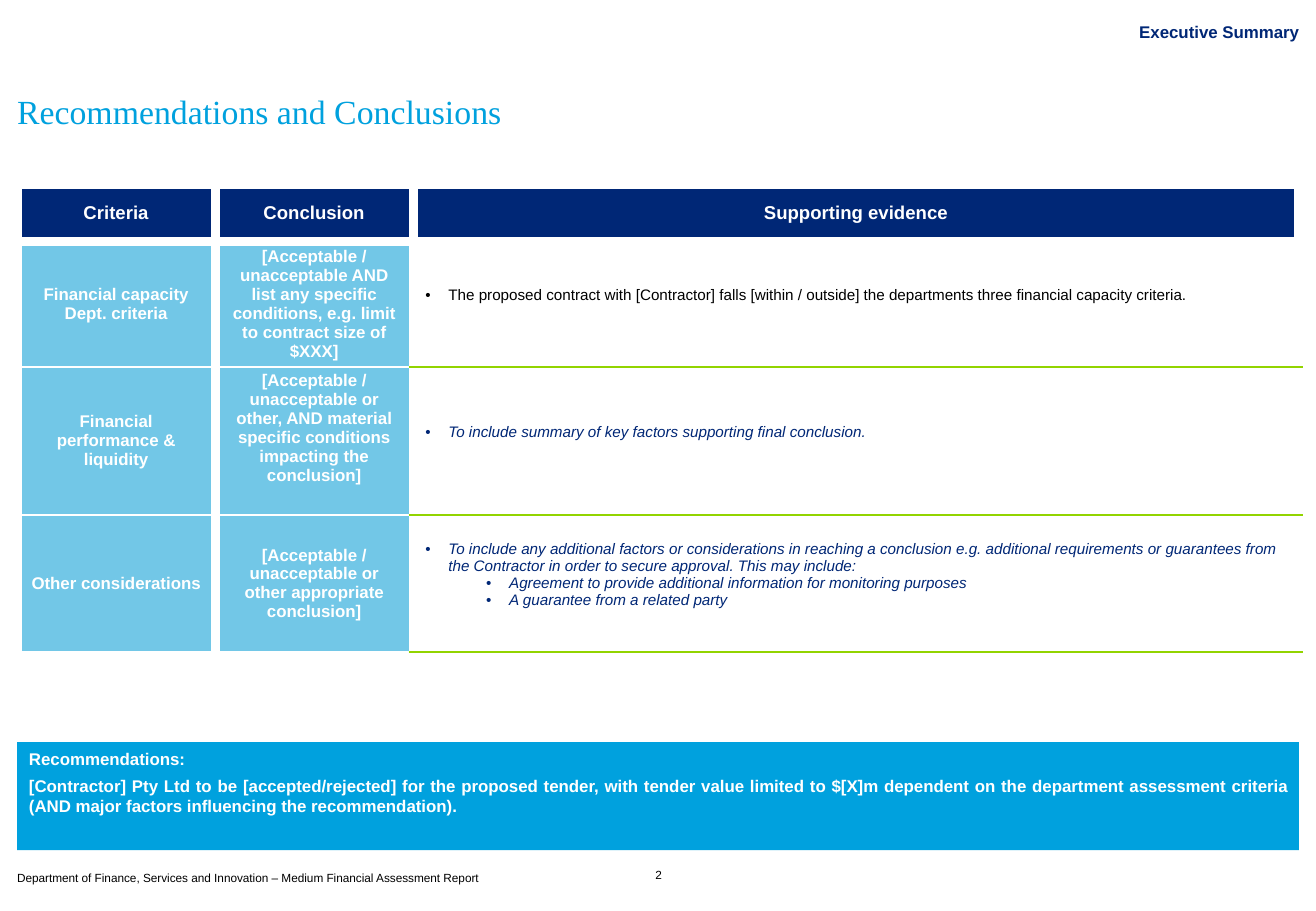
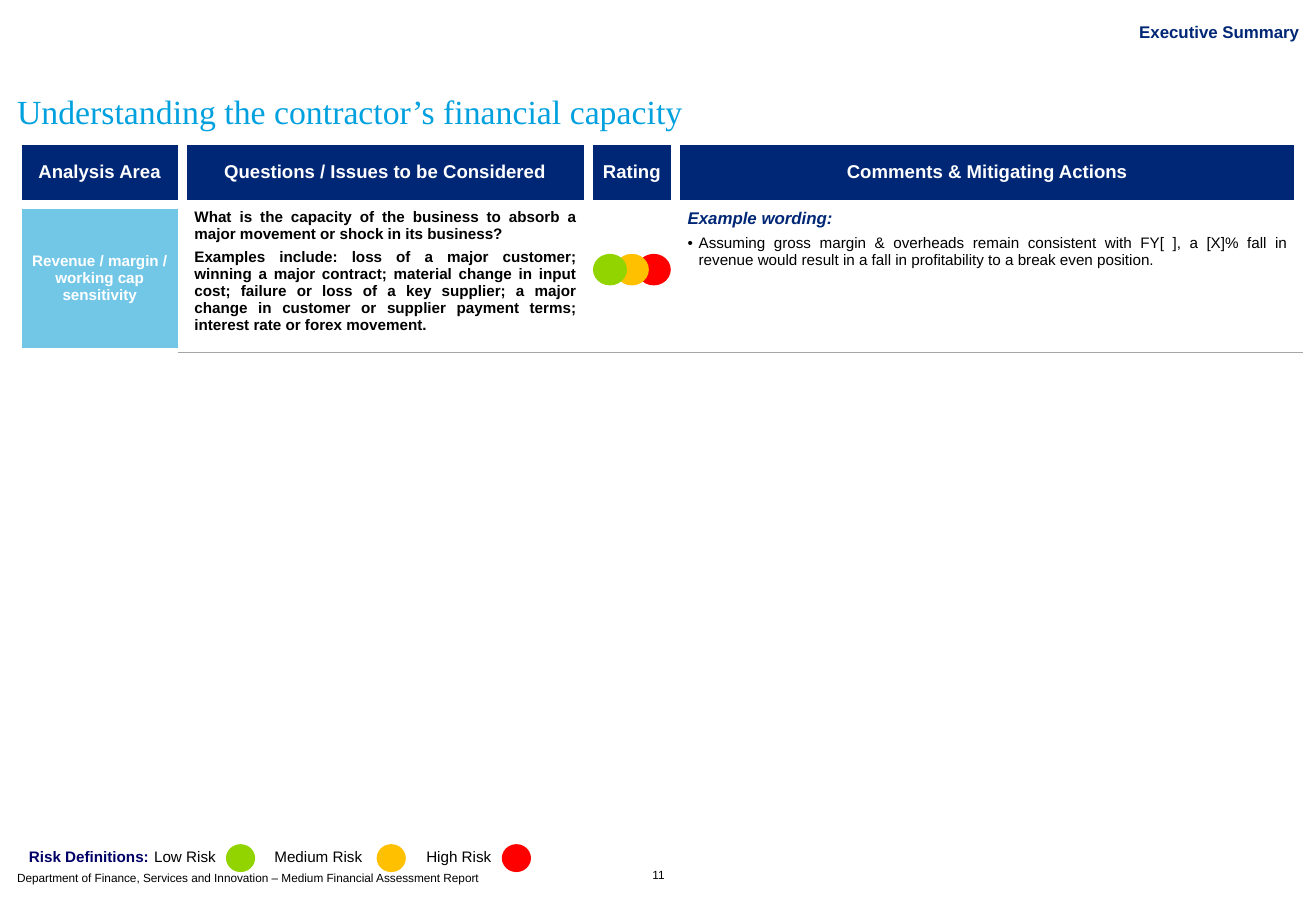
from lxml import etree
from pptx import Presentation
from pptx.dml.color import RGBColor
from pptx.enum.shapes import MSO_SHAPE
from pptx.enum.text import MSO_ANCHOR, MSO_AUTO_SIZE, PP_ALIGN
from pptx.oxml.ns import qn
from pptx.util import Inches, Pt

LEFT, MID, RIGHT, JUST = PP_ALIGN.LEFT, PP_ALIGN.CENTER, PP_ALIGN.RIGHT, PP_ALIGN.JUSTIFY
TOP, CENTER, BOTTOM = MSO_ANCHOR.TOP, MSO_ANCHOR.MIDDLE, MSO_ANCHOR.BOTTOM
FIXED = MSO_AUTO_SIZE.NONE
RECT, OVAL = MSO_SHAPE.RECTANGLE, MSO_SHAPE.OVAL

HUES = {
    "white": "FFFFFF", "black": "000000", "navy": "002776", "ink": "000066",
    "blue": "00A1DE", "sky": "72C7E7", "green": "92D400", "amber": "FFC000",
    "red": "FF0000", "gray": "A6A6A6",
}
STYLES = {
    "title": (10, "navy", True, False, "Arial"),
    "heading": (20, "blue", False, False, "Times New Roman"),
    "footer": (7, "black", False, False, "Arial"),
    "head": (11, "white", True, False, "Arial"),
    "label": (10, "white", True, False, "Arial"),
    "small": (9, "white", True, False, "Arial"),
    "plain": (9, "black", False, False, "Arial"),
    "bold": (9, "black", True, False, "Arial"),
    "hint": (9, "navy", False, True, "Arial"),
    "lead": (10, "navy", True, True, "Arial"),
    "key": (9, "ink", True, False, "Arial"),
}
KINDS = {
    "head": ("navy", MID, CENTER, 0.4, (0.1, 0.06, 0.1, 0.1)),
    "label": ("sky", MID, CENTER, 0.4, (0.1, 0.04, 0.1, 0.04)),
    "upper": ("sky", MID, TOP, 0.4, (0.1, 0.04, 0.1, 0.04)),
    "note": (None, LEFT, CENTER, 0, (0.1, 0.04, 0.1, 0.18)),
    "text": (None, JUST, TOP, 0.4, (0.1, 0.04, 0.1, 0.04)),
}
MAIN, SUB, NEAR = (0.19, 0.19), (0.69, 0.19), (0.09, 0.09)
EDGE, WIDE = 0.14, 10.55


def add_run(par, style, text):
    size, hue, bold, slant, face = STYLES[style]
    run = par.add_run()
    run.text = text
    font = run.font
    font.size, font.bold, font.italic, font.name = Pt(size), bold, slant, face
    font.color.rgb = RGBColor.from_string(HUES[hue])


def write(frame, lines, align=LEFT, gap=0):
    for i, (style, text, *dot) in enumerate(lines):
        par = frame.add_paragraph() if i else frame.paragraphs[0]
        par.alignment, par.line_spacing = align, 1.0
        par.space_before, par.space_after = Pt(0), Pt(gap * STYLES[style][0])
        left, hang = dot[0] if dot else (0, 0)
        props = par._p.get_or_add_pPr()
        props.set("marL", str(Inches(left)))
        props.set("indent", str(-Inches(hang)))
        if dot:
            etree.SubElement(props, qn("a:buFont")).set("typeface", "Arial")
            etree.SubElement(props, qn("a:buChar")).set("char", "•")
        else:
            etree.SubElement(props, qn("a:buNone"))
        add_run(par, style, text)
        par.font.size = Pt(STYLES[style][0])


PAGES = [
    {
        "num": "2", "heading": "Recommendations and Conclusions", "top": 1.55,
        "cols": [1.63, 1.63, 7.29], "rows": [0.44, 1.03, 1.22, 1.13],
        "rule": ("green", 1), "split": 1,
        "heads": ["Criteria", "Conclusion", "Supporting evidence"],
        "body": [
            [("label", [("label", "Financial capacity Dept. criteria")]),
             ("label", [("label", "[Acceptable / unacceptable AND list any specific conditions, e.g. limit to contract size of $XXX]")]),
             ("note", [("plain", "The proposed contract with [Contractor] falls [within / outside] the departments three financial capacity criteria.", MAIN)])],
            [("label", [("label", "Financial performance & liquidity")]),
             ("upper", [("label", "[Acceptable / unacceptable or other, AND material specific conditions impacting the conclusion]")]),
             ("note", [("hint", "To include summary of key factors supporting final conclusion.", MAIN)])],
            [("label", [("label", "Other considerations")]),
             ("label", [("label", "[Acceptable / unacceptable or other appropriate conclusion]")]),
             ("note", [
                 ("hint", "To include any additional factors or considerations in reaching a conclusion e.g. additional requirements or guarantees from the Contractor in order to secure approval. This may include:", MAIN),
                 ("hint", "Agreement to provide additional information for monitoring purposes", SUB),
                 ("hint", "A guarantee from a related party", SUB)])],
        ],
    },
    {
        "num": "11", "heading": "Understanding the contractor’s financial capacity", "top": 1.19,
        "cols": [1.36, 3.34, 0.72, 5.13], "rows": [0.49, 1.22],
        "rule": ("gray", 0.75), "split": 6,
        "heads": ["Analysis Area", "Questions / Issues to be Considered", "Rating", "Comments & Mitigating Actions"],
        "body": [
            [("label", [("small", "Revenue / margin / working cap sensitivity")]),
             ("text", [
                 ("bold", "What is the capacity of the business to absorb a major movement or shock in its business?"),
                 ("bold", "Examples include: loss of a major customer; winning a major contract; material change in input cost; failure or loss of a key supplier; a major change in customer or supplier payment terms; interest rate or forex movement.")]),
             ("text", []),
             ("text", [
                 ("lead", "Example wording:"),
                 ("plain", "Assuming gross margin & overheads remain consistent with FY[ ], a [X]% fall in revenue would result in a fall in profitability to a break even position.", NEAR)])],
        ],
    },
]

prs = Presentation()
prs.slide_width, prs.slide_height = Inches(10.83), Inches(7.5)
slides = []

for page in PAGES:
    slide = prs.slides.add_slide(prs.slide_layouts[1])
    slides.append(slide)
    title, body = slide.placeholders
    foot = slide.shapes.add_textbox(0, 0, 0, 0)
    num = slide.shapes.add_textbox(0, 0, 0, 0)
    for shape, box, pad, anchor, align, style, text in [
        (title, (6.62, 0.18, 4.07, 0.17), 0, TOP, RIGHT, "title", "Executive Summary"),
        (body, (EDGE, 0.35, WIDE, 1.12), 0, CENTER, LEFT, "heading", page["heading"]),
        (foot, (EDGE, 7.13, WIDE, 0.2), 0.04, TOP, LEFT, "footer",
         "Department of Finance, Services and Innovation – Medium Financial Assessment Report"),
        (num, (5.27, 7.14, 0.3, 0.12), 0, BOTTOM, MID, "footer", page["num"]),
    ]:
        shape.left, shape.top, shape.width, shape.height = map(Inches, box)
        frame = shape.text_frame
        frame.word_wrap, frame.auto_size, frame.vertical_anchor = True, FIXED, anchor
        frame.margin_left = frame.margin_right = 0
        frame.margin_top = frame.margin_bottom = Inches(pad)
        write(frame, [(style, text)], align)

    cols, rows = page["cols"], page["rows"]
    table = slide.shapes.add_table(
        len(rows), len(cols), Inches(EDGE), Inches(page["top"]),
        Inches(sum(cols)), Inches(sum(rows))).table
    table.horz_banding = table.first_row = False
    for col, width in zip(table.columns, cols):
        col.width = Inches(width)
    for row, height in zip(table.rows, rows):
        row.height = Inches(height)

    above = [None] * len(cols)
    grid = [[("head", [("head", text)]) for text in page["heads"]]] + page["body"]
    for r, line in enumerate(grid):
        for c, (kind, lines) in enumerate(line):
            hue, align, anchor, gap, pads = KINDS[kind]
            cell = table.cell(r, c)
            cell.vertical_anchor = anchor
            cell.margin_left, cell.margin_top, cell.margin_right, cell.margin_bottom = map(Inches, pads)
            if hue:
                cell.fill.solid()
                cell.fill.fore_color.rgb = RGBColor.from_string(HUES[hue])
            else:
                cell.fill.background()
            write(cell.text_frame, lines, align, gap)

            side = ("white", 6)
            if kind == "head":
                below = side
            elif hue:
                below = ("white", page["split"])
            else:
                below = page["rule"]
            edges = [("L", side), ("R", side), ("T", above[c]), ("B", below)]
            above[c] = below
            props = cell._tc.get_or_add_tcPr()
            for i, (name, (tint, weight)) in enumerate(e for e in edges if e[1]):
                edge = etree.Element(qn("a:ln" + name), w=str(Pt(weight)))
                fill = etree.SubElement(edge, qn("a:solidFill"))
                etree.SubElement(fill, qn("a:srgbClr")).set("val", HUES[tint])
                props.insert(i, edge)

first, second = slides

panel = first.shapes.add_shape(RECT, Inches(EDGE), Inches(6.11), Inches(WIDE), Inches(0.89))
panel.shadow.inherit = False
panel.fill.solid()
panel.fill.fore_color.rgb = RGBColor.from_string(HUES["blue"])
panel.line.fill.background()
panel.text_frame.word_wrap = True
panel.text_frame.vertical_anchor = TOP
write(panel.text_frame, [
    ("label", "Recommendations:"),
    ("label", "[Contractor] Pty Ltd to be [accepted/rejected] for the proposed tender, with tender value limited to $[X]m dependent on the department assessment criteria (AND major factors influencing the recommendation)."),
], JUST, 0.4)

for left, width, style, text in [
    (EDGE, 1.2, "key", "Risk Definitions:"),
    (1.17, 0.8, "plain", "Low Risk"),
    (2.16, 1, "plain", "Medium Risk"),
    (3.41, 0.8, "plain", "High Risk"),
]:
    label = second.shapes.add_textbox(Inches(left), Inches(6.93), Inches(width), Inches(0.25))
    label.text_frame.word_wrap = True
    write(label.text_frame, [(style, text)])

risks = ["green", "amber", "red"]
dots = [(x, 6.95, 0.24, 0.23, hue) for x, hue in zip([1.86, 3.1, 4.13], risks)]
dots += [(4.88 + 0.18 * i, 2.09, 0.28, 0.26, risks[i]) for i in (2, 1, 0)]
for *box, hue in dots:
    dot = second.shapes.add_shape(OVAL, *map(Inches, box))
    dot.shadow.inherit = False
    dot.fill.solid()
    dot.fill.fore_color.rgb = RGBColor.from_string(HUES[hue])
    dot.line.fill.background()

prs.save("out.pptx")
